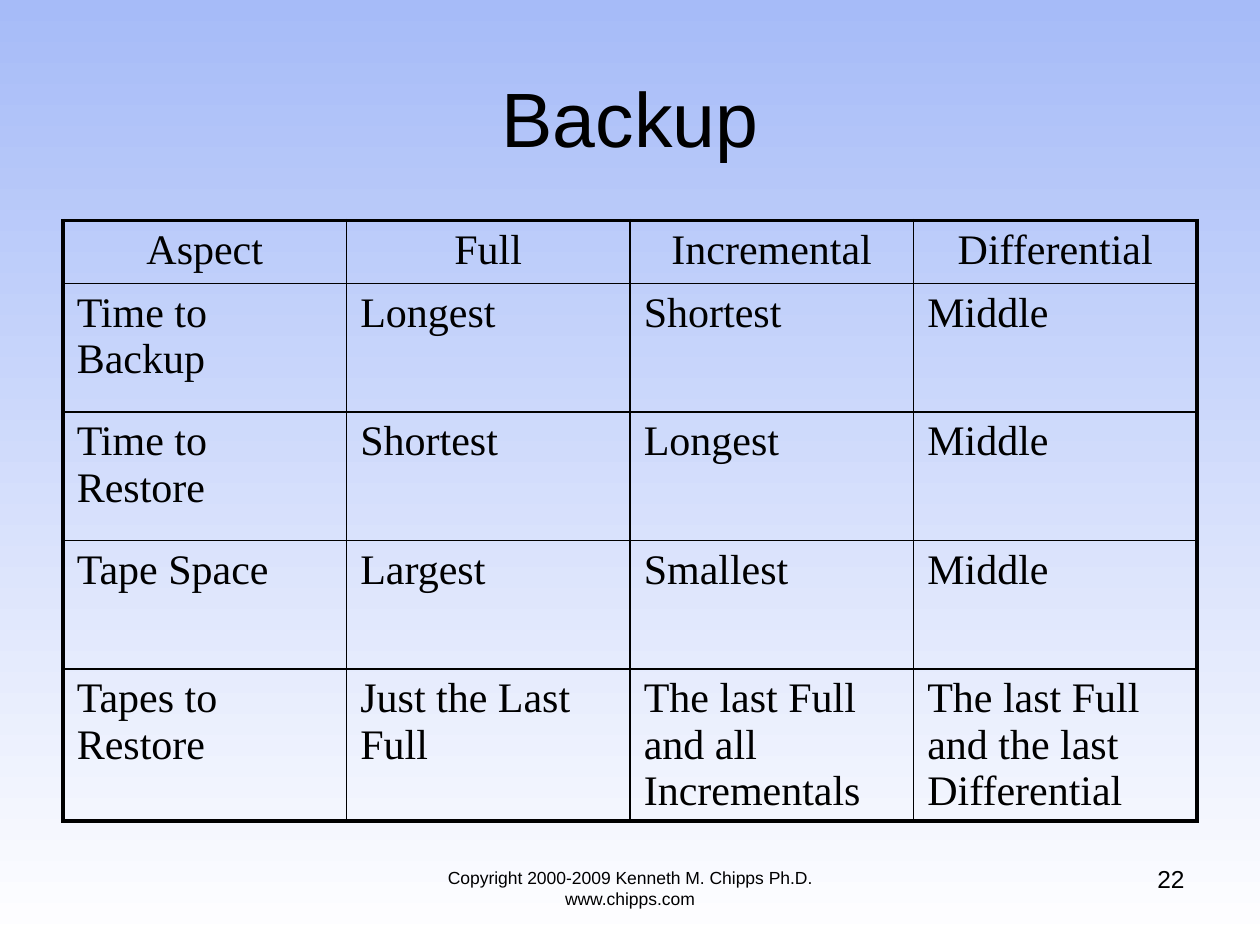
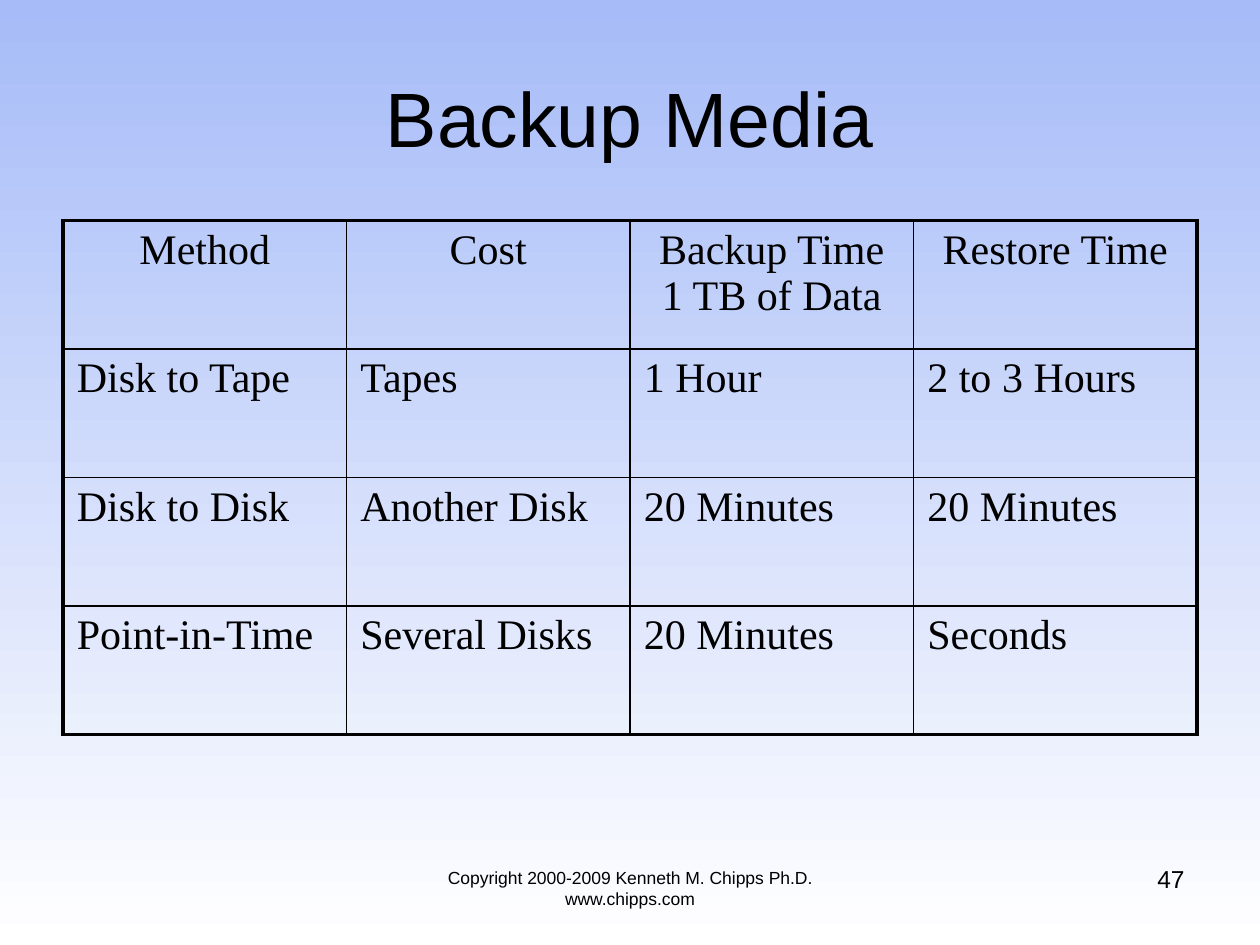
from lxml import etree
from pptx import Presentation
from pptx.dml.color import RGBColor
from pptx.enum.text import MSO_ANCHOR, PP_ALIGN
from pptx.oxml.ns import qn
from pptx.util import Inches, Pt

CENTER, LEFT, RIGHT = PP_ALIGN.CENTER, PP_ALIGN.LEFT, PP_ALIGN.RIGHT
MIDDLE = MSO_ANCHOR.MIDDLE
BLACK, SKY, WHITE = "000000", "A6BBF8", "FFFFFF"
SANS, SERIF = "Arial", "Times New Roman"
MARGIN, TABLE_TOP = 0.5, 1.75
CONTENT_WIDTH = 10 - 2 * MARGIN
HEADER_ROW, BODY_ROW = 0.5, 1.02
THIN, THICK = 1, 2.25
COPYRIGHT = "Copyright 2000-2009 Kenneth M. Chipps Ph.D. www.chipps.com"

PAGES = [
    ("Backup", "22", HEADER_ROW, [
        ["Aspect", "Full", "Incremental", "Differential"],
        ["Time to Backup", "Longest", "Shortest", "Middle"],
        ["Time to Restore", "Shortest", "Longest", "Middle"],
        ["Tape Space", "Largest", "Smallest", "Middle"],
        ["Tapes to Restore", "Just the Last Full",
         "The last Full and all Incrementals",
         "The last Full and the last Differential"],
    ]),
    ("Backup Media", "47", BODY_ROW, [
        ["Method", "Cost", "Backup Time\n1 TB of Data", "Restore Time"],
        ["Disk to Tape", "Tapes", "1 Hour", "2 to 3 Hours"],
        ["Disk to Disk", "Another Disk", "20 Minutes", "20 Minutes"],
        ["Point-in-Time", "Several Disks", "20 Minutes", "Seconds"],
    ]),
]


def color(value):
    return RGBColor.from_string(value)


def write(frame, text, font, size, align):
    frame.word_wrap = True
    para = frame.paragraphs[0]
    para.alignment = align
    for index, line in enumerate(text.split("\n")):
        if index:
            para.add_line_break()
        span = para.add_run()
        span.text = line
        span.font.name = font
        span.font.size = Pt(size)
        span.font.color.rgb = color(BLACK)


deck = Presentation()
deck.slide_width, deck.slide_height = Inches(10), Inches(7.5)

backdrop = deck.slide_master.background.fill
backdrop.gradient()
backdrop.gradient_angle = 270
for stop, shade, position in zip(backdrop.gradient_stops, (SKY, WHITE), (0, 1)):
    stop.color.rgb = color(shade)
    stop.position = position

for heading, number, first_height, rows in PAGES:
    page = deck.slides.add_slide(deck.slide_layouts[5])

    title = page.shapes.title
    title.left, title.top = Inches(MARGIN), Inches(0.3)
    title.width, title.height = Inches(CONTENT_WIDTH), Inches(1.25)
    title.text_frame.vertical_anchor = MIDDLE
    write(title.text_frame, heading, SANS, 44, CENTER)

    heights = [first_height] + [BODY_ROW] * (len(rows) - 1)
    last_row, last_column = len(rows) - 1, len(rows[0]) - 1
    table = page.shapes.add_table(
        len(rows), len(rows[0]), Inches(MARGIN), Inches(TABLE_TOP),
        Inches(CONTENT_WIDTH), Inches(sum(heights))).table
    table.first_row = table.horz_banding = False

    for r, (height, texts) in enumerate(zip(heights, rows)):
        table.rows[r].height = Inches(height)
        for c, text in enumerate(texts):
            cell = table.cell(r, c)
            cell.margin_left = cell.margin_right = Inches(0.11)
            cell.margin_top = cell.margin_bottom = Inches(0.05)
            write(cell.text_frame, text, SERIF, 24, LEFT if r else CENTER)
            outer_edges = {"a:lnL": c == 0, "a:lnR": c == last_column,
                           "a:lnT": r == 0, "a:lnB": r == last_row}
            properties = cell._tc.get_or_add_tcPr()
            for edge, is_outer in outer_edges.items():
                border = etree.SubElement(properties, qn(edge))
                border.set("w", str(Pt(THICK if is_outer else THIN)))
                paint = etree.SubElement(border, qn("a:solidFill"))
                etree.SubElement(paint, qn("a:srgbClr")).set("val", BLACK)
            cell.fill.background()

    for left, top, width, text, size, align in (
            (3, 6.83, 4, COPYRIGHT, 10, CENTER),
            (7.17, 6.81, 2.33, number, 14, RIGHT)):
        box = page.shapes.add_textbox(
            Inches(left), Inches(top), Inches(width), Inches(0.52))
        write(box.text_frame, text, SANS, size, align)

deck.save("out.pptx")
